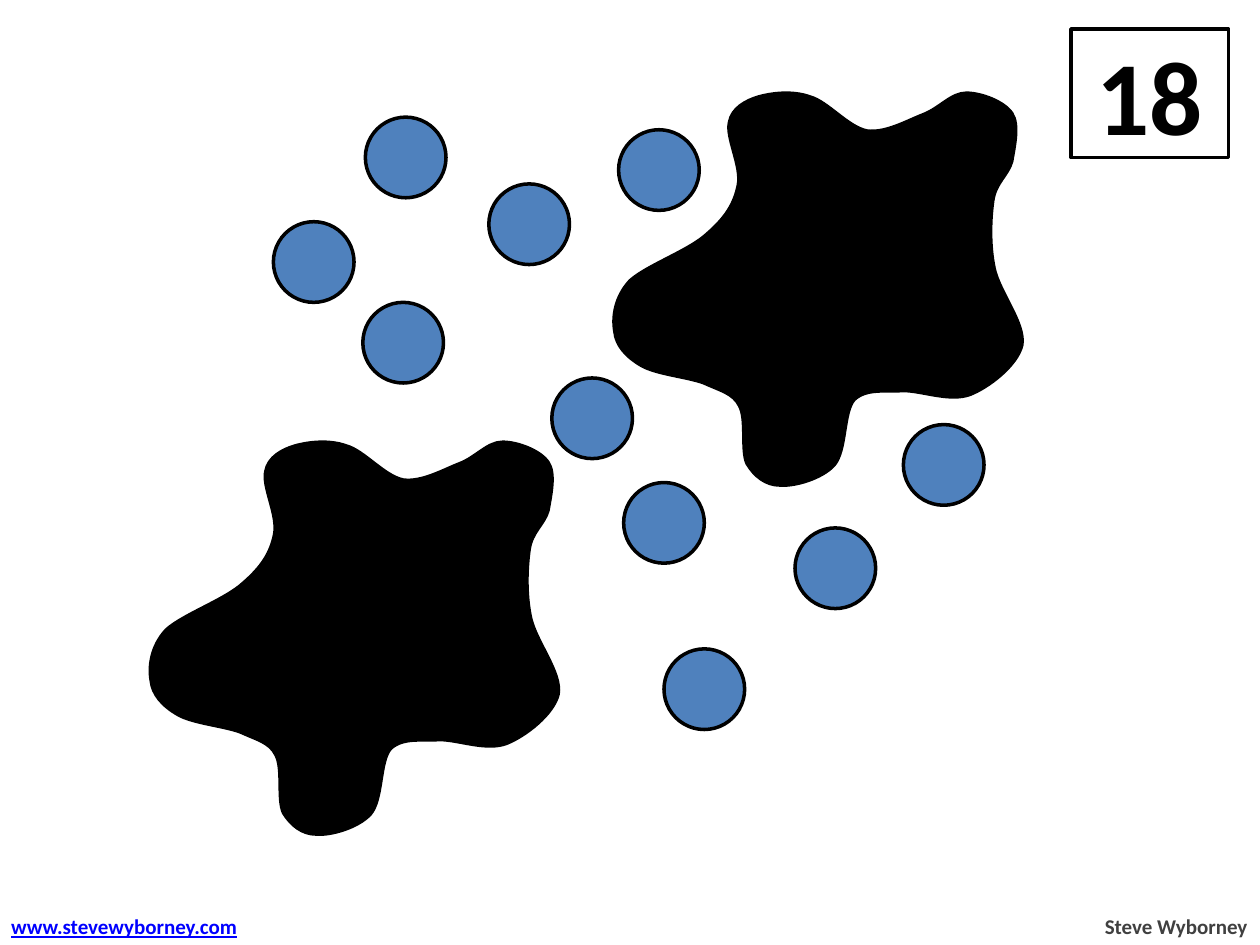
from pptx import Presentation
from pptx.dml.color import RGBColor
from pptx.enum.shapes import MSO_SHAPE
from pptx.enum.text import MSO_ANCHOR, MSO_AUTO_SIZE, PP_ALIGN
from pptx.oxml.ns import qn
from pptx.util import Inches, Pt

RECTANGLE, OVAL = MSO_SHAPE.RECTANGLE, MSO_SHAPE.OVAL
MIDDLE = MSO_ANCHOR.MIDDLE
GROW = MSO_AUTO_SIZE.SHAPE_TO_FIT_TEXT
LEFT, CENTER, RIGHT = PP_ALIGN.LEFT, PP_ALIGN.CENTER, PP_ALIGN.RIGHT

BLACK, WHITE, BLUE = "000000", "FFFFFF", "4F81BD"
GREY, LINK_BLUE = "404040", "0000FF"

DOT_SIZE = 0.64
DOTS = [
    (2.9, 0.93), (2.17, 1.76), (3.88, 1.46), (4.91, 1.03), (2.88, 2.4),
    (4.38, 3), (4.95, 3.83), (7.17, 3.37), (6.31, 4.19), (5.27, 5.15),
]

SPLAT_OFFSETS = [(0, 0), (-3.68, 2.77)]
SPLAT_START = (5.09, 2.9)
SPLAT_CURVES = [
    ((4.97, 2.83), (4.89, 2.74), (4.88, 2.63)),
    ((4.86, 2.52), (4.88, 2.36), (5, 2.23)),
    ((5.13, 2.11), (5.47, 1.99), (5.61, 1.86)),
    ((5.76, 1.73), (5.83, 1.62), (5.86, 1.47)),
    ((5.89, 1.32), (5.76, 1.09), (5.79, 0.97)),
    ((5.81, 0.86), (5.92, 0.8), (6.02, 0.77)),
    ((6.13, 0.74), (6.29, 0.72), (6.43, 0.77)),
    ((6.57, 0.81), (6.73, 1.01), (6.88, 1.04)),
    ((7.03, 1.06), (7.2, 0.96), (7.33, 0.91)),
    ((7.46, 0.86), (7.55, 0.74), (7.67, 0.74)),
    ((7.79, 0.74), (7.97, 0.81), (8.03, 0.9)),
    ((8.09, 0.99), (8.05, 1.16), (8.03, 1.28)),
    ((8, 1.39), (7.9, 1.45), (7.88, 1.59)),
    ((7.86, 1.73), (7.85, 1.94), (7.89, 2.13)),
    ((7.93, 2.32), (8.14, 2.57), (8.11, 2.74)),
    ((8.07, 2.9), (7.85, 3.07), (7.7, 3.13)),
    ((7.54, 3.19), (7.32, 3.1), (7.17, 3.1)),
    ((7.02, 3.11), (6.88, 3.08), (6.78, 3.17)),
    ((6.69, 3.27), (6.72, 3.57), (6.62, 3.69)),
    ((6.52, 3.8), (6.3, 3.86), (6.19, 3.85)),
    ((6.08, 3.85), (5.99, 3.78), (5.93, 3.68)),
    ((5.88, 3.57), (5.93, 3.33), (5.87, 3.22)),
    ((5.82, 3.12), (5.72, 3.1), (5.59, 3.04)),
    ((5.46, 2.99), (5.21, 2.97), SPLAT_START),
]


def rgb(value):
    """Turn a hex string into a colour."""
    return RGBColor.from_string(value)


class DotCard:
    """Hold the style and the current slide."""

    font_name = "Calibri"
    line_width = Pt(2)

    def __init__(self, page):
        """Keep the slide to draw on."""
        self.page = page

    def paint(self, shape, fill):
        """Give a shape a flat fill and a black outline."""
        shape.shadow.inherit = False
        shape.fill.solid()
        shape.fill.fore_color.rgb = rgb(fill)
        shape.line.color.rgb = rgb(BLACK)
        shape.line.width = self.line_width

    def add_text(self, frame, text, size, color, align, underline=None):
        """Put one bold run into a text frame."""
        para = frame.paragraphs[0]
        para.alignment = align
        span = para.add_run()
        span.text = text
        span.font.name = self.font_name
        span.font.size = Pt(size)
        span.font.bold = True
        span.font.underline = underline
        span.font.color.rgb = rgb(color)

    def shape(self, kind, left, top, width, height, fill):
        """Add a painted preset shape."""
        shape = self.page.shapes.add_shape(
            kind, Inches(left), Inches(top), Inches(width), Inches(height))
        self.paint(shape, fill)
        return shape

    def number(self, text):
        """Add the framed count in the corner."""
        box = self.shape(RECTANGLE, 8.5, 0.23, 1.25, 1.02, WHITE)
        box.text_frame.vertical_anchor = MIDDLE
        self.add_text(box.text_frame, text, 60, BLACK, CENTER)

    def footer(self, text, left, width, color, align, underline=None):
        """Add a line of text at the foot of the slide."""
        box = self.page.shapes.add_textbox(
            Inches(left), Inches(7.2), Inches(width), Inches(0.3))
        box.text_frame.word_wrap = False
        box.text_frame.auto_size = GROW
        self.add_text(box.text_frame, text, 12, color, align, underline)

    def splat(self, shift_x, shift_y):
        """Add an ink splat whose outline is made of Bezier curves."""
        def place(point):
            """Shift a point and convert it to slide units."""
            return Inches(point[0] + shift_x), Inches(point[1] + shift_y)

        builder = self.page.shapes.build_freeform(*place(SPLAT_START))
        builder.add_line_segments(
            [place(point) for curve in SPLAT_CURVES for point in curve])
        shape = builder.convert_to_shape()
        outline = shape._element.find(".//" + qn("a:path"))
        lines = outline.findall(qn("a:lnTo"))
        for index in range(0, len(lines), 3):
            first, *others = lines[index:index + 3]
            curve = first.makeelement(qn("a:cubicBezTo"))
            first.addprevious(curve)
            for line in (first, *others):
                curve.append(line[0])
                outline.remove(line)
        self.paint(shape, BLACK)


def main():
    """Build the slide and save it."""
    deck = Presentation()
    deck.slide_width, deck.slide_height = Inches(10), Inches(7.5)
    card = DotCard(deck.slides.add_slide(deck.slide_layouts[6]))
    card.number("18")
    card.footer("Steve Wyborney", 8.66, 1.34, GREY, RIGHT)
    card.footer("www.stevewyborney.com", -0.01, 2.05, LINK_BLUE, LEFT, True)
    for left, top in DOTS:
        card.shape(OVAL, left, top, DOT_SIZE, DOT_SIZE, BLUE)
    for offset in SPLAT_OFFSETS:
        card.splat(*offset)
    deck.save("out.pptx")


if __name__ == "__main__":
    main()
